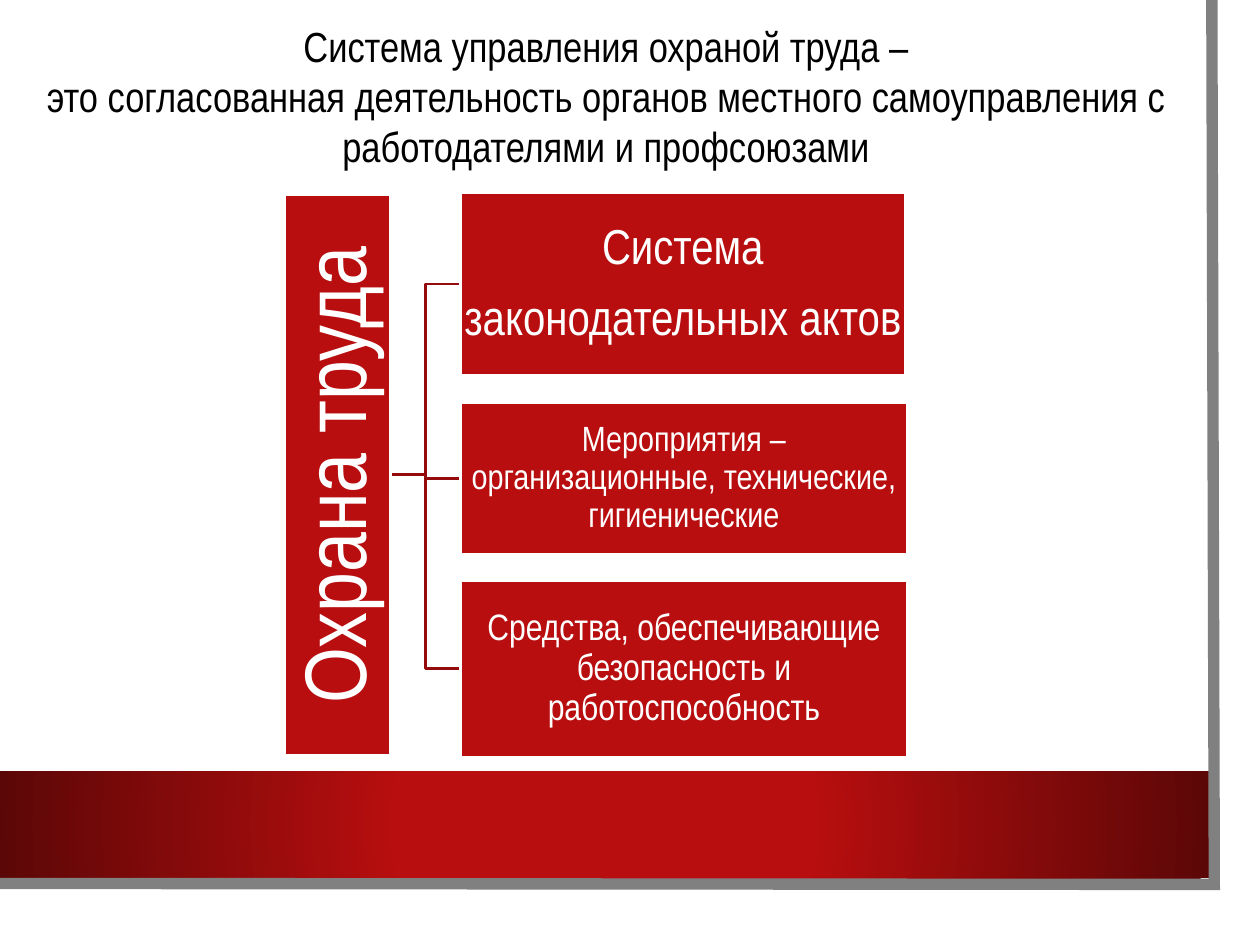
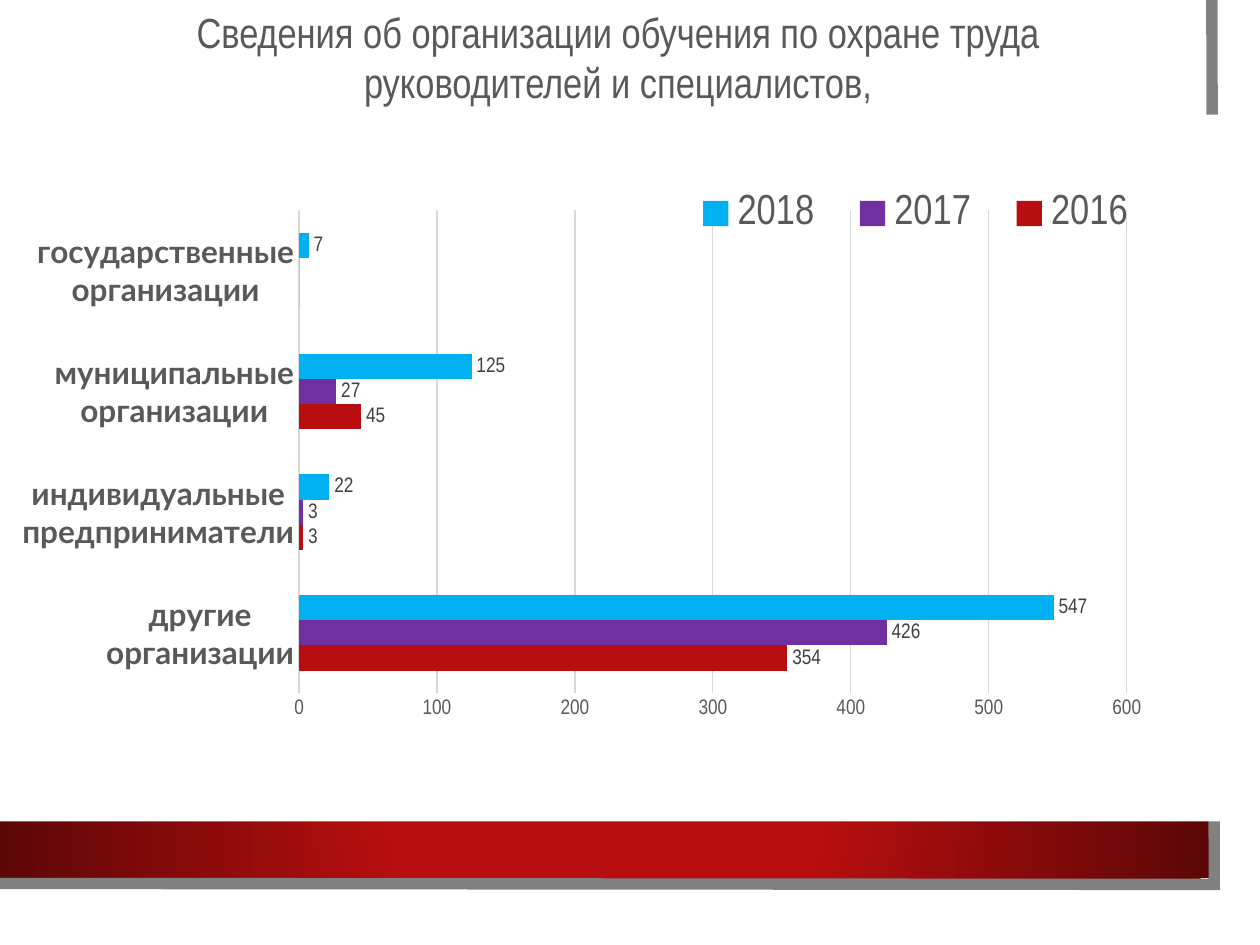
from lxml.etree import SubElement
from pptx import Presentation
from pptx.chart.data import CategoryChartData
from pptx.dml.color import RGBColor
from pptx.enum.chart import XL_CHART_TYPE, XL_LEGEND_POSITION, XL_TICK_MARK
from pptx.enum.shapes import MSO_CONNECTOR, MSO_SHAPE
from pptx.enum.text import MSO_ANCHOR, PP_ALIGN
from pptx.oxml import parse_xml
from pptx.oxml.ns import nsdecls, qn
from pptx.util import Cm, Pt

RED, DARK_RED, LINE_RED = "B80E0F", "5C0707", "930B0C"
WHITE, BLACK, GREY, TEXT_GREY = "FFFFFF", "000000", "808080", "595959"
GRID_GREY, LABEL_GREY = "D9D9D9", "404040"
FONT, CATEGORY_FONT = "Arial Narrow", "Lato"


def colour(code):
    """Turn a hex string into a colour."""
    return RGBColor.from_string(code)


def style_font(font, size, code, name=FONT, bold=False):
    """Set the face, size, weight and colour of a font."""
    font.name, font.size, font.bold = name, Pt(size), bold
    font.color.rgb = colour(code)


def style_line(line, code, width):
    """Set the colour and width of a line."""
    line.color.rgb = colour(code)
    line.width = Pt(width)


def fill_text(shape, text, size, code):
    """Write centred, wrapping text, one paragraph for each line of it."""
    frame = shape.text_frame
    frame.text = text
    frame.word_wrap = True
    for para in frame.paragraphs:
        para.alignment = PP_ALIGN.CENTER
        for span in para.runs:
            style_font(span.font, size, code)
    return frame


def add_band(page):
    """Draw the red band with dark ends."""
    band = page.shapes.add_shape(MSO_SHAPE.RECTANGLE, 0, Cm(15.55), Cm(24.38), Cm(2.16))
    band.shadow.inherit = False
    band.line.fill.background()
    gradient = parse_xml(
        f'<a:gradFill {nsdecls("a")} rotWithShape="1"><a:gsLst>'
        f'<a:gs pos="34000"><a:srgbClr val="{RED}"/></a:gs>'
        f'<a:gs pos="100000"><a:srgbClr val="{DARK_RED}"/></a:gs></a:gsLst>'
        '<a:path path="circle"><a:fillToRect l="50000" t="50000" r="50000" b="50000"/>'
        '</a:path></a:gradFill>')
    band._element.spPr.find(qn("a:prstGeom")).addnext(gradient)


def add_edge(page):
    """Draw the grey edge along the right and bottom of the card."""
    builder = page.shapes.build_freeform(Cm(24.43), 0)
    builder.add_line_segments([(Cm(24.48), Cm(17.83)), (0, Cm(17.81))], close=False)
    edge = builder.convert_to_shape()
    edge.shadow.inherit = False
    edge.fill.background()
    style_line(edge.line, GREY, 6.5)
    SubElement(edge.line._ln, qn("a:miter"), lim="800000")


def add_page(deck):
    """Add a blank page with the shared band and edge."""
    page = deck.slides.add_slide(deck.slide_layouts[6])
    add_band(page)
    add_edge(page)
    return page


def add_title(page, text, left, top, width, height, code):
    """Add a centred title."""
    box = page.shapes.add_textbox(Cm(left), Cm(top), Cm(width), Cm(height))
    fill_text(box, text, 24, code)


def add_block(page, text, size, left, top, width, height, inset, rotation=0):
    """Add a red diagram block with white text."""
    block = page.shapes.add_shape(
        MSO_SHAPE.RECTANGLE, Cm(left), Cm(top), Cm(width), Cm(height))
    block.shadow.inherit = False
    block.rotation = rotation
    block.fill.solid()
    block.fill.fore_color.rgb = colour(RED)
    style_line(block.line, WHITE, 1.5)
    frame = fill_text(block, text, size, WHITE)
    frame.vertical_anchor = MSO_ANCHOR.MIDDLE
    frame.margin_left = frame.margin_right = Cm(inset)
    frame.margin_top = frame.margin_bottom = Cm(inset)
    for para in frame.paragraphs:
        para.line_spacing = 0.9
        para.space_after = Pt(round(size * 0.35))


def add_branch(page, left, start, right, end):
    """Join the root block to a branch block with an elbow."""
    branch = page.shapes.add_connector(
        MSO_CONNECTOR.ELBOW, Cm(left), Cm(start), Cm(right), Cm(end))
    style_line(branch.line, LINE_RED, 1.5)
    SubElement(branch._element.spPr, qn("a:effectLst"))


def add_system_diagram(page):
    """Draw the root block and its three branches."""
    root_right, root_middle, branch_left = 7.87, 9.57, 9.28
    branches = [
        ("Система\nзаконодательных актов", 28, 3.89, 8.97, 3.68, 0.05),
        ("Мероприятия – организационные, технические, гигиенические",
         20, 8.12, 9.02, 3.05, 0.03),
        ("Средства, обеспечивающие безопасность и работоспособность",
         21, 11.7, 9.02, 3.56, 0.03),
    ]
    for text, size, top, width, height, inset in branches:
        add_branch(page, root_right, root_middle, branch_left, top + height / 2)
        add_block(page, text, size, branch_left, top, width, height, inset)
    add_block(page, "Охрана труда", 50, 1.16, 8.51, 11.3, 2.13, 0.08, rotation=270)


def manual_layout(x, y, width, height, inner=False):
    """Build a chart layout from fractions of the chart area."""
    target = '<c:layoutTarget val="inner"/>' if inner else ""
    sizes = {"x": x, "y": y, "w": width, "h": height}
    return parse_xml(
        f'<c:layout {nsdecls("c")}><c:manualLayout>{target}'
        '<c:xMode val="edge"/><c:yMode val="edge"/>'
        + "".join(f'<c:{key} val="{value}"/>' for key, value in sizes.items())
        + '</c:manualLayout></c:layout>')


def place_part(part, layout, index):
    """Give a chart part its layout in place of any earlier one."""
    for earlier in part.findall(qn("c:layout")):
        part.remove(earlier)
    part.insert(index, layout)


def style_axes(chart):
    """Format the category and value axes."""
    categories, values = chart.category_axis, chart.value_axis
    for axis in (categories, values):
        axis.major_tick_mark = axis.minor_tick_mark = XL_TICK_MARK.NONE
    style_font(categories.tick_labels.font, 18, TEXT_GREY, CATEGORY_FONT, bold=True)
    style_line(categories.format.line, GRID_GREY, 0.75)
    style_font(values.tick_labels.font, 12, TEXT_GREY)
    values.format.line.fill.background()
    values.minimum_scale, values.maximum_scale, values.major_unit = 0, 600, 100
    style_line(values.major_gridlines.format.line, GRID_GREY, 0.75)


def style_series(series, code):
    """Colour a series and label its values other than zero."""
    series.format.fill.solid()
    series.format.fill.fore_color.rgb = colour(code)
    labels = series.data_labels
    labels.show_value = True
    style_font(labels.font, 12, LABEL_GREY)
    zeros = [index for index, value in enumerate(series.values) if value == 0]
    for position, index in enumerate(zeros):
        labels._element.insert(position, parse_xml(
            f'<c:dLbl {nsdecls("c")}><c:idx val="{index}"/><c:delete val="1"/></c:dLbl>'))


def add_training_chart(page):
    """Add the bar chart of training by kind of organisation."""
    years = {
        "2016": ((354, 3, 45, 0), RED),
        "2017": ((426, 3, 27, 0), "7030A0"),
        "2018": ((547, 22, 125, 7), "00B0F0"),
    }
    data = CategoryChartData()
    data.categories = ["другие\nорганизации", "индивидуальные предприниматели",
                       "муниципальные организации", "государственные организации"]
    for year, (values, _) in years.items():
        data.add_series(year, values)
    chart = page.shapes.add_chart(
        XL_CHART_TYPE.BAR_CLUSTERED, 0, Cm(2.31), Cm(24.61), Cm(14.25), data).chart
    chart.has_title = False
    style_font(chart.font, 10, BLACK)
    style_axes(chart)
    plot = chart.plots[0]
    plot.vary_by_categories = False
    plot.gap_width = 182
    for series, (_, code) in zip(plot.series, years.values()):
        style_series(series, code)

    chart.has_legend = True
    legend = chart.legend
    legend.position = XL_LEGEND_POSITION.BOTTOM
    legend.include_in_layout = False
    style_font(legend.font, 24, TEXT_GREY)
    place_part(legend._element, manual_layout(0.55, 0.09, 0.4, 0.1), 1)

    space = chart._chartSpace
    place_part(space.chart.plotArea, manual_layout(0.245, 0.135, 0.678, 0.684, True), 0)
    space.chart.addnext(parse_xml(
        f'<c:spPr {nsdecls("c", "a")}><a:solidFill><a:srgbClr val="{WHITE}"/></a:solidFill>'
        '<a:ln><a:noFill/></a:ln></c:spPr>'))


def main():
    """Build and save the deck."""
    deck = Presentation()
    deck.slide_width, deck.slide_height = Cm(25.4), Cm(19.05)

    page = add_page(deck)
    add_system_diagram(page)
    add_title(page, "Система управления охраной труда –\n"
              "это согласованная деятельность органов местного самоуправления "
              "с работодателями и профсоюзами", 0.66, 0.28, 23.11, 3.33, BLACK)

    page = add_page(deck)
    add_training_chart(page)
    add_title(page, "Сведения об организации обучения по охране труда "
              "руководителей и специалистов,", 3.66, 0, 17.6, 2.31, TEXT_GREY)

    deck.save("out.pptx")


if __name__ == "__main__":
    main()
